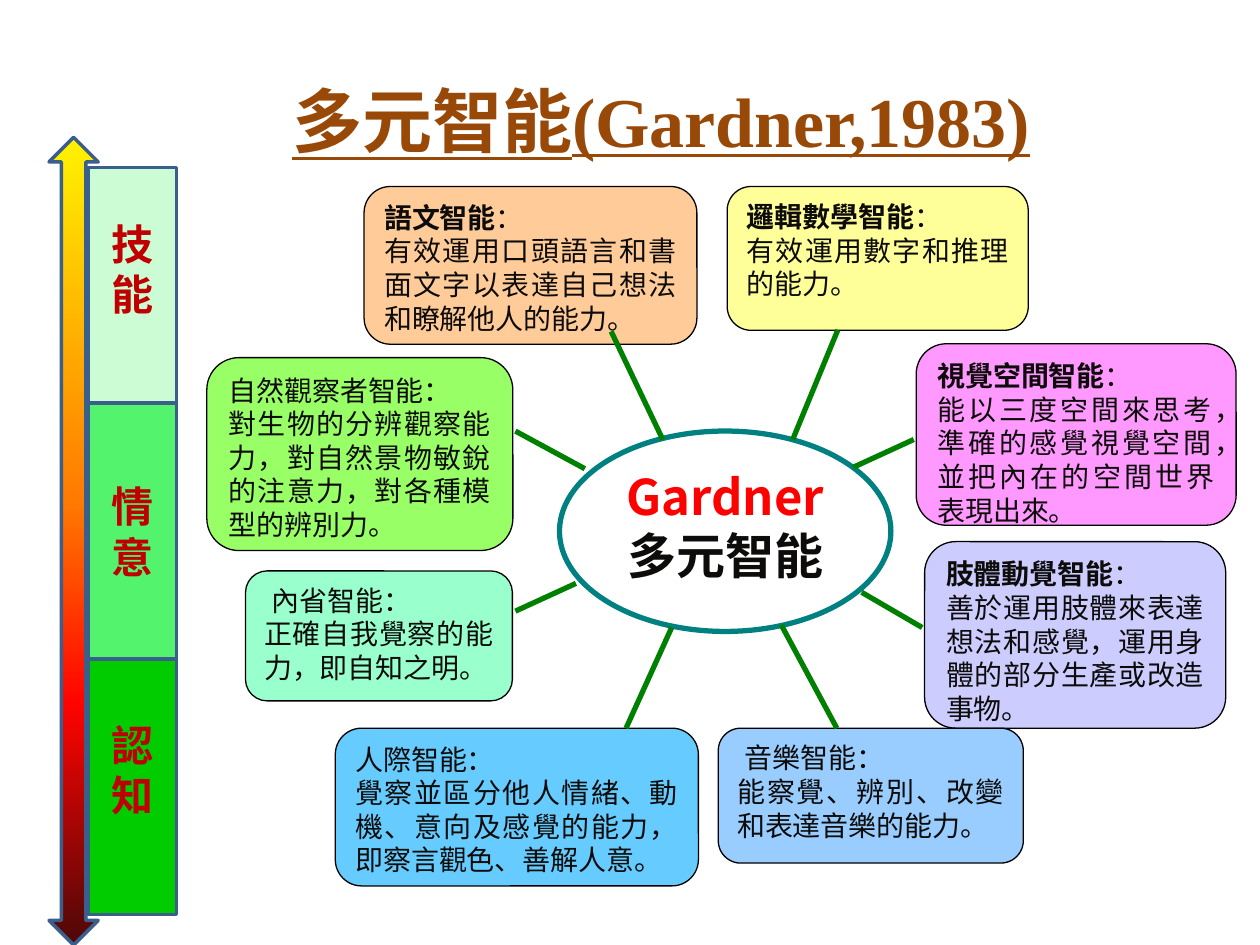
from lxml import etree
from pptx import Presentation
from pptx.dml.color import RGBColor
from pptx.enum.shapes import MSO_CONNECTOR, MSO_SHAPE
from pptx.enum.text import MSO_ANCHOR, MSO_AUTO_SIZE, PP_ALIGN
from pptx.oxml.ns import qn
from pptx.util import Cm, Pt

STRAIGHT = MSO_CONNECTOR.STRAIGHT
ELLIPSE, RECTANGLE = MSO_SHAPE.OVAL, MSO_SHAPE.RECTANGLE
ROUNDED, DOUBLE_ARROW = MSO_SHAPE.ROUNDED_RECTANGLE, MSO_SHAPE.UP_DOWN_ARROW
TOP, MIDDLE = MSO_ANCHOR.TOP, MSO_ANCHOR.MIDDLE
CENTER, JUSTIFY = PP_ALIGN.CENTER, PP_ALIGN.JUSTIFY

SERIF, SANS, CJK, LABEL = "Times New Roman", "Arial", "Noto Sans CJK SC", "Calibri"

WHITE = RGBColor(0xFF, 0xFF, 0xFF)
BLACK = RGBColor(0x00, 0x00, 0x00)
INK = RGBColor(0x0D, 0x0C, 0x0B)
RED = RGBColor(0xFF, 0x00, 0x00)
DARK_RED = RGBColor(0xC0, 0x00, 0x00)
BROWN = RGBColor(0x98, 0x48, 0x07)
TEAL = RGBColor(0x00, 0x80, 0x80)
GREEN = RGBColor(0x00, 0x80, 0x00)
STEEL = RGBColor(0x3A, 0x5F, 0x8C)
ORANGE = RGBColor(0xFF, 0xCC, 0x99)
YELLOW = RGBColor(0xFF, 0xFF, 0x99)
PINK = RGBColor(0xFF, 0x99, 0xFF)
LAVENDER = RGBColor(0xCC, 0xCC, 0xFF)
LIGHT_BLUE = RGBColor(0x99, 0xCC, 0xFF)
SKY = RGBColor(0x66, 0xCC, 0xFF)
MINT = RGBColor(0x99, 0xFF, 0xCC)
LIME = RGBColor(0x99, 0xFF, 0x66)
PALE_GREEN = RGBColor(0xCC, 0xFC, 0xD4)
MID_GREEN = RGBColor(0x53, 0xF3, 0x6E)
DEEP_GREEN = RGBColor(0x00, 0xCC, 0x00)
ARROW_STOPS = [(0, RGBColor(0xFF, 0xF2, 0x00)), (45, RGBColor(0xFF, 0x7A, 0x00)),
               (70, RGBColor(0xFF, 0x03, 0x00)), (100, RGBColor(0x4D, 0x08, 0x08))]

# Heading, body, area in cm, fill, bold heading, heading font, body font, heading indent
INTELLIGENCES = [
    ("語文智能", "有效運用口頭語言和書面文字以表達自己想法和瞭解他人的能力。",
     (7.34, 3.76, 6.71, 3.18), ORANGE, True, SANS, CJK, 0),
    ("肢體動覺智能", "善於運用肢體來表達想法和感覺，運用身體的部分生產或改造事物。",
     (18.64, 10.92, 6.07, 3.76), LAVENDER, True, SERIF, SERIF, 0),
    ("視覺空間智能", "能以三度空間來思考，準確的感覺視覺空間，並把內在的空間世界表現出來。",
     (18.47, 6.93, 6.45, 3.66), PINK, True, SERIF, SERIF, 0),
    ("邏輯數學智能", "有效運用數字和推理的能力。",
     (14.66, 3.76, 6.07, 2.9), YELLOW, True, SANS, CJK, 0),
    ("自然觀察者智能", "對生物的分辨觀察能力，對自然景物敏銳的注意力，對各種模型的辨別力。",
     (4.17, 7.21, 6.17, 3.89), LIME, False, SERIF, SERIF, 0),
    ("內省智能", "正確自我覺察的能力，即自知之明。",
     (4.95, 11.51, 5.38, 2.62), MINT, False, SERIF, SERIF, 0.15),
    ("人際智能", "覺察並區分他人情緒、動機、意向及感覺的能力，即察言觀色、善解人意。",
     (6.76, 14.68, 7.32, 3.18), SKY, False, SERIF, SERIF, 0),
    ("音樂智能", "能察覺、辨別、改變和表達音樂的能力。",
     (14.48, 14.68, 6.15, 2.72), LIGHT_BLUE, False, SERIF, SERIF, 0.15),
]

# Start and end of each spoke in cm
SPOKES = [
    (16.89, 6.65, 15.98, 8.86), (12.32, 6.68, 13.36, 8.86),
    (15.75, 12.6, 16.87, 14.68), (17.37, 11.94, 18.59, 12.65),
    (11.61, 11.76, 10.39, 12.32), (10.39, 8.69, 11.79, 9.45),
    (17.2, 9.42, 18.42, 8.86), (13.54, 12.65, 12.62, 14.68),
]

# Label, top, height, fill, bottom inset in cm
DOMAINS = [("認知", 13.28, 5.16, DEEP_GREEN, 0.81),
           ("情意", 8.13, 5.16, MID_GREEN, 0.13),
           ("技能", 3.38, 4.75, PALE_GREEN, 0.81)]


def set_font(font, name, size, color, bold=False):
    font.name, font.size, font.bold = name, Pt(size), bold
    font.color.rgb = color


def add_box(page, kind, area, fill, line, width, anchor=TOP):
    box = page.shapes.add_shape(kind, *map(Cm, area))
    box.shadow.inherit = False
    if fill is not None:
        box.fill.solid()
        box.fill.fore_color.rgb = fill
    box.line.color.rgb = line
    box.line.width = Pt(width)
    box.text_frame.word_wrap = True
    box.text_frame.vertical_anchor = anchor
    return box


def add_title(page):
    title = page.shapes.title
    title.left, title.top, title.width, title.height = map(Cm, (1.9, 1.12, 22.86, 2.59))
    frame = title.text_frame
    frame.text = "多元智能(Gardner,1983)"
    frame.vertical_anchor = MIDDLE
    frame.auto_size = MSO_AUTO_SIZE.NONE
    para = frame.paragraphs[0]
    para.alignment = CENTER
    set_font(para.font, SERIF, 40, BROWN, True)
    para.font.underline = True


def add_hub(page):
    hub = add_box(page, ELLIPSE, (11.28, 8.69, 6.68, 4.04), WHITE, TEAL, 3)
    para = hub.text_frame.paragraphs[0]
    para.alignment = CENTER
    for text, name, color in [("Gardner", CJK, RED), ("多元智能", SERIF, INK)]:
        span = para.add_run()
        span.text = text
        set_font(span.font, name, 28, color, True)


def add_intelligence(page, heading, body, area, fill, bold, head_font, body_font, indent):
    box = add_box(page, ROUNDED, area, fill, BLACK, 0.75)
    head = box.text_frame.paragraphs[0]
    head.alignment = JUSTIFY
    if indent:
        head._p.get_or_add_pPr().set("indent", str(Cm(indent)))
    for text, weight in [(heading, bold), ("：", False)]:
        span = head.add_run()
        span.text = text
        set_font(span.font, head_font, 16, INK, weight)
    para = box.text_frame.add_paragraph()
    para.text = body
    para.alignment = JUSTIFY
    set_font(para.font, body_font, 16, INK)


def add_spoke(page, ends):
    spoke = page.shapes.add_connector(STRAIGHT, *map(Cm, ends))
    spoke.line.color.rgb = GREEN
    spoke.line.width = Pt(3)
    etree.SubElement(spoke._element.spPr, qn("a:effectLst"))


def add_domain(page, label, top, height, fill, bottom_inset):
    box = add_box(page, RECTANGLE, (1.78, top, 1.78, height), fill, STEEL, 2, MIDDLE)
    box.text_frame.margin_bottom = Cm(bottom_inset)
    para = box.text_frame.paragraphs[0]
    para.text = label
    para.alignment = CENTER
    set_font(para.font, LABEL, 24, DARK_RED, True)


def add_scale_arrow(page):
    arrow = add_box(page, DOUBLE_ARROW, (0.99, 2.77, 0.99, 16.28), None, STEEL, 2)
    arrow.fill.gradient()
    arrow.fill.gradient_angle = 270  # counted anticlockwise: runs downwards
    stops = arrow._element.spPr.find(qn("a:gradFill")).find(qn("a:gsLst"))
    for stop in list(stops):
        stops.remove(stop)
    for percent, color in ARROW_STOPS:
        stop = etree.SubElement(stops, qn("a:gs"), pos=str(percent * 1000))
        etree.SubElement(stop, qn("a:srgbClr"), val=str(color))


def main():
    deck = Presentation()
    deck.slide_width, deck.slide_height = Cm(25.4), Cm(19.05)
    page = deck.slides.add_slide(deck.slide_layouts[5])

    # Mind map
    add_title(page)
    add_hub(page)
    for intelligence in INTELLIGENCES:
        add_intelligence(page, *intelligence)
    for ends in SPOKES:
        add_spoke(page, ends)

    # Learning domains on the left
    for domain in DOMAINS:
        add_domain(page, *domain)
    add_scale_arrow(page)

    deck.save("out.pptx")


if __name__ == "__main__":
    main()
